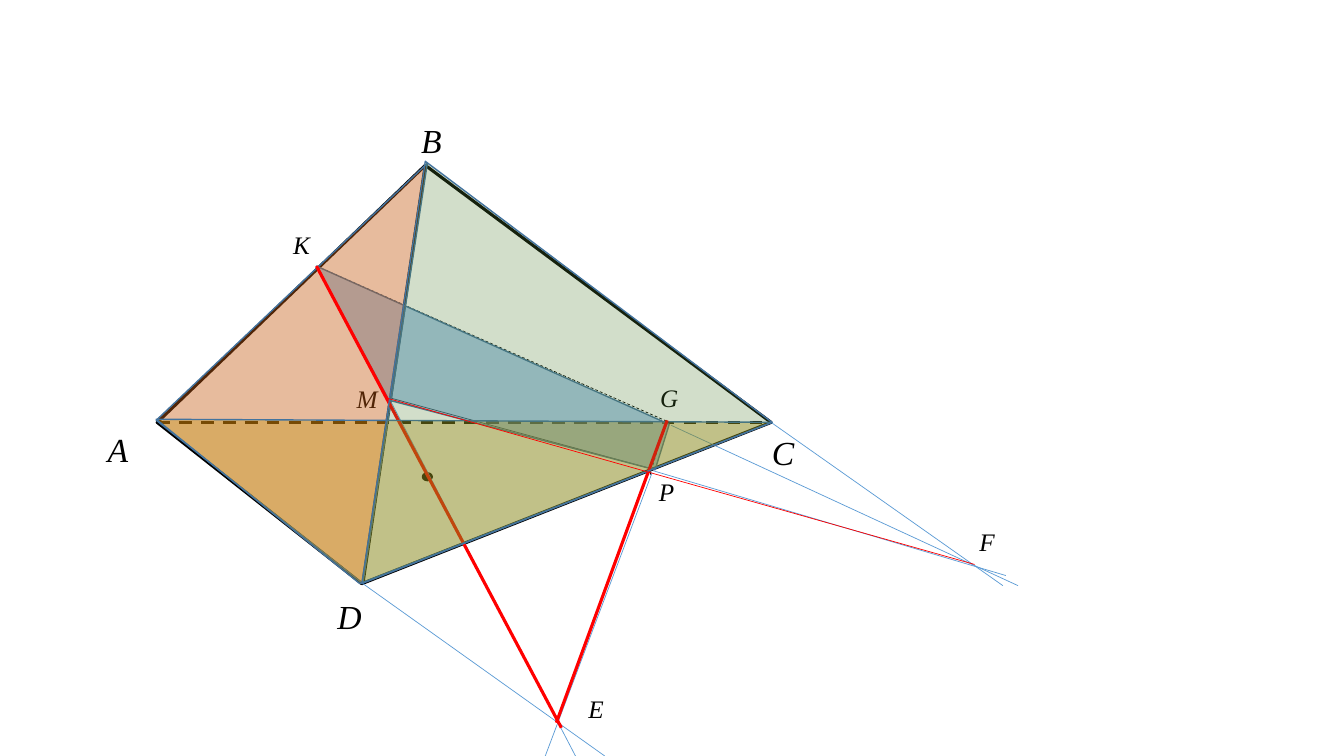
from dataclasses import dataclass
from typing import Optional, Union

from lxml.etree import SubElement
from pptx import Presentation
from pptx.dml.color import RGBColor
from pptx.enum.dml import MSO_LINE
from pptx.enum.shapes import MSO_CONNECTOR, MSO_SHAPE
from pptx.enum.text import MSO_AUTO_SIZE
from pptx.oxml.ns import qn
from pptx.util import Cm, Pt

COLORS = {
    "black": "000000", "red": "FF0000", "blue": "5B9BD5", "outline": "43739E",
    "orange": "C55A11", "gold": "BF9000", "green": "548235",
}
CM_PER_INCH = 2.54
LABEL_FONT = {"name": "Times New Roman", "italic": True}
Point = tuple[float, float]


@dataclass
class Label:
    text: str
    left: float
    top: float
    width: float
    size: int = 18


@dataclass
class Segment:
    start: Point
    end: Point
    color: str = "black"
    width: float = 0.5
    dashed: bool = False


@dataclass
class Face:
    points: list[Point]
    fill: Optional[str] = None
    opacity: int = 100
    line: str = "outline"
    width: float = 1


LABELS = [
    Label("А", 0.97, 4.21, 0.41, 24),
    Label("С", 7.56, 4.24, 0.43, 24),
    Label("D", 3.25, 5.86, 0.45, 24),
    Label("В", 4.08, 1.14, 0.41, 24),
    Label("P", 6.44, 4.68, 0.36),
    Label("M", 3.44, 3.75, 0.41),
    Label("K", 2.81, 2.23, 0.37),
    Label("G", 6.45, 3.74, 0.38),
    Label("F", 9.62, 5.17, 0.36),
    Label("E", 5.74, 6.83, 0.36),
]
PYRAMID: list[Union[Segment, Face]] = [
    Segment((1.56, 4.19), (7.65, 4.19), width=2.25, dashed=True),
    Segment((3.6, 5.79), (4.22, 1.64), width=2.25),
    Face([(4.22, 1.64), (7.65, 4.19), (3.59, 5.79), (1.56, 4.19)], line="black", width=2.25),
]
SECTION: list[Union[Segment, Face]] = [
    Segment((3.6, 5.79), (6, 7.5), "blue"),
    Segment((5.71, 7.5), (3.86, 3.95), "blue"),
    Segment((3.84, 3.95), (3.16, 2.69)),
    Segment((3.88, 3.95), (6.5, 4.66)),
    Segment((6.48, 4.67), (9.98, 5.71), "blue"),
    Segment((7.65, 4.19), (9.95, 5.81), "blue"),
    Segment((5.41, 7.5), (6.47, 4.69), "blue"),
    Segment((6.45, 4.71), (6.6, 4.21), dashed=True),
    Segment((3.14, 2.64), (6.64, 4.19), dashed=True),
    Segment((6.66, 4.22), (10.1, 5.81), "blue"),
    Face([(3.14, 2.64), (6.64, 4.21), (6.5, 4.66), (3.86, 3.97)], "blue", 52),
    Face([(1.55, 4.17), (4.24, 1.62), (3.6, 5.79)], "orange", 41),
    Segment((3.14, 2.64), (5.57, 7.22), "red", 2.25),
    Face([(1.55, 4.16), (7.66, 4.19), (3.57, 5.79)], "gold", 35),
    Segment((5.52, 7.17), (6.62, 4.17), "red", 2.25),
    Face([(3.59, 5.79), (4.22, 1.6), (7.66, 4.19)], "green", 26),
    Segment((3.84, 3.95), (9.67, 5.6), "red"),
]


def lengths(*inches: float) -> list[Cm]:
    return [Cm(v * CM_PER_INCH) for v in inches]


def rgb(name: str) -> RGBColor:
    return RGBColor.from_string(COLORS[name])


def set_line(sp, color: str, width: float) -> None:
    sp.line.color.rgb = rgb(color)
    sp.line.width = Pt(width)


def draw_label(s, label: Label) -> None:
    height = 0.5 if label.size == 24 else 0.4
    sp = s.shapes.add_textbox(*lengths(label.left, label.top, label.width, height))
    tf = sp.text_frame
    tf.word_wrap = False
    tf.auto_size = MSO_AUTO_SIZE.SHAPE_TO_FIT_TEXT
    r = tf.paragraphs[0].add_run()
    r.text = label.text
    for key, value in {**LABEL_FONT, "size": Pt(label.size)}.items():
        setattr(r.font, key, value)
    r.font.color.rgb = rgb("black")


def draw_segment(s, seg: Segment) -> None:
    sp = s.shapes.add_connector(MSO_CONNECTOR.STRAIGHT, *lengths(*seg.start, *seg.end))
    set_line(sp, seg.color, seg.width)
    if seg.dashed:
        sp.line.dash_style = MSO_LINE.DASH
    SubElement(sp._element.spPr, qn("a:effectLst"))


def draw_face(s, face: Face) -> None:
    first, *rest = [lengths(*point) for point in face.points]
    builder = s.shapes.build_freeform(*first)
    builder.add_line_segments(rest, close=True)
    sp = builder.convert_to_shape()
    sp.shadow.inherit = False
    set_line(sp, face.line, face.width)
    if face.fill is None:
        sp.fill.background()
        return
    sp.fill.solid()
    sp.fill.fore_color.rgb = rgb(face.fill)
    color = sp._element.spPr.find(qn("a:solidFill")).find(qn("a:srgbClr"))
    SubElement(color, qn("a:alpha"), val=str(face.opacity * 1000))


def draw_figure(s, parts: list[Union[Segment, Face]]) -> None:
    for part in parts:
        if isinstance(part, Segment):
            draw_segment(s, part)
        else:
            draw_face(s, part)


def draw_dot(s) -> None:
    sp = s.shapes.add_shape(MSO_SHAPE.OVAL, *lengths(4.2, 4.7, 0.08, 0.06))
    sp.shadow.inherit = False
    sp.fill.solid()
    sp.fill.fore_color.rgb = rgb("black")
    set_line(sp, "black", 2.25)


def main() -> None:
    prs = Presentation()
    prs.slide_width, prs.slide_height = Cm(33.87), Cm(19.05)
    s = prs.slides.add_slide(prs.slide_layouts[6])
    for label in LABELS:
        draw_label(s, label)
    draw_figure(s, PYRAMID)
    draw_dot(s)
    draw_figure(s, SECTION)
    prs.save("out.pptx")


if __name__ == "__main__":
    main()
